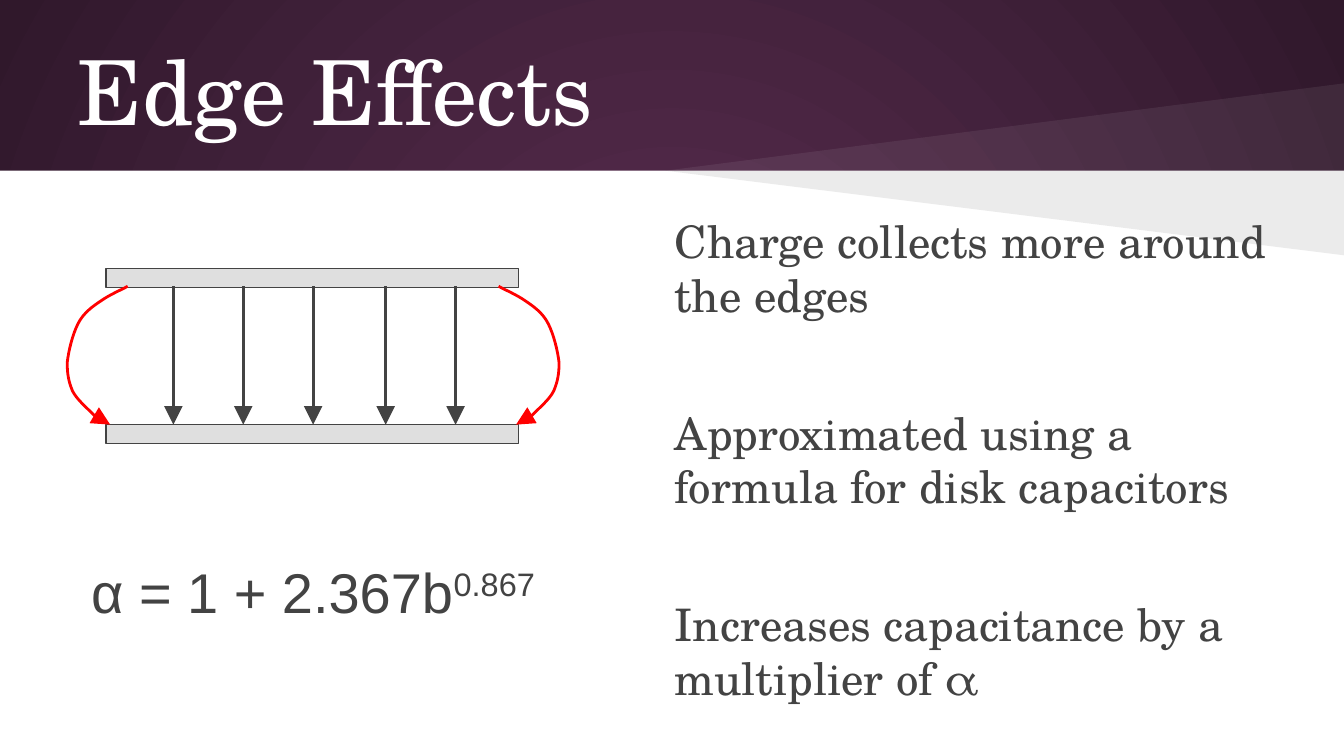
from dataclasses import dataclass

from lxml import etree
from pptx import Presentation
from pptx import util as u
from pptx.dml.color import RGBColor
from pptx.enum import shapes, text
from pptx.oxml.ns import qn

DARK, WHITE, RED = "434343", "FFFFFF", "FF0000"
SERIF = "TeX Gyre Schola"
PAGE_WIDTH = 10
PAGE_HEIGHT = PAGE_WIDTH * 9 / 16
BAND_HEIGHT = 1.27
PLATE_TOPS = (2.0, 3.16)
FIELD_TOP, FIELD_BOTTOM = 2.13, 3.16
DIAGRAM_CENTER = 2.33

Point = tuple[float, float]


@dataclass(frozen=True)
class Area:
    left: float
    top: float
    width: float
    height: float

    def lengths(self) -> list[u.Length]:
        return [u.Inches(v) for v in (self.left, self.top, self.width, self.height)]


@dataclass(frozen=True)
class Wedge:
    points: tuple[Point, ...]
    color: str
    opacity: int


def rgb(value: str) -> RGBColor:
    return RGBColor.from_string(value)


def add_bar(page, area: Area, fill: str, line: str | None = None) -> None:
    bar = page.shapes.add_shape(shapes.MSO_SHAPE.RECTANGLE, *area.lengths())
    bar.shadow.inherit = False
    bar.fill.solid()
    bar.fill.fore_color.rgb = rgb(fill)
    if line:
        bar.line.color.rgb = rgb(line)
        bar.line.width = u.Pt(0.75)
    else:
        bar.line.fill.background()


def add_outline(page, points: tuple[Point, ...], close: bool):
    builder = page.shapes.build_freeform(*(u.Inches(v) for v in points[0]))
    builder.add_line_segments(
        [(u.Inches(x), u.Inches(y)) for x, y in points[1:]], close=close
    )
    outline = builder.convert_to_shape()
    outline.shadow.inherit = False
    return outline


def add_wedge(page, wedge: Wedge) -> None:
    shape = add_outline(page, wedge.points, close=True)
    shape.fill.solid()
    shape.fill.fore_color.rgb = rgb(wedge.color)
    shape.line.fill.background()
    color = shape.element.spPr.find(f"{qn('a:solidFill')}/{qn('a:srgbClr')}")
    etree.SubElement(color, qn("a:alpha"), val=str(wedge.opacity * 1000))


def style_arrow(shape, color: str) -> None:
    shape.line.color.rgb = rgb(color)
    shape.line.width = u.Pt(1.5)
    line = shape.element.spPr.find(qn("a:ln"))
    etree.SubElement(line, qn("a:tailEnd"), type="triangle", w="lg", len="lg")


def add_field_line(page, x: float) -> None:
    arrow = page.shapes.add_connector(
        shapes.MSO_CONNECTOR.STRAIGHT,
        u.Inches(x), u.Inches(FIELD_TOP), u.Inches(x), u.Inches(FIELD_BOTTOM),
    )
    style_arrow(arrow, DARK)
    etree.SubElement(arrow.element.spPr, qn("a:effectLst"))


def add_fringe_line(page, points: tuple[Point, ...]) -> None:
    curve = add_outline(page, points, close=False)
    curve.fill.background()
    style_arrow(curve, RED)
    # Every three points become the controls and end of one Bezier curve
    outline = next(curve.element.iter(qn("a:path")))
    segments = outline.findall(qn("a:lnTo"))
    for start in range(0, len(segments), 3):
        bezier = etree.SubElement(outline, qn("a:cubicBezTo"))
        for segment in segments[start:start + 3]:
            bezier.append(segment[0])
            outline.remove(segment)


def add_text(page, area: Area, paragraphs: list[str], *, font: str, size: float,
             color: str, inset: Point = (0.08, 0.04), gap: float = 0,
             align=text.PP_ALIGN.LEFT, superscript: str = "") -> None:
    box = page.shapes.add_textbox(*area.lengths())
    frame = box.text_frame
    frame.word_wrap = True
    frame.vertical_anchor = text.MSO_ANCHOR.TOP
    frame.margin_left = frame.margin_right = u.Inches(inset[0])
    frame.margin_top = frame.margin_bottom = u.Inches(inset[1])
    for index, words in enumerate(paragraphs):
        para = frame.add_paragraph() if index else frame.paragraphs[0]
        para.alignment = align
        para.space_before = u.Pt(gap if index else 0)
        spans = [para.add_run()]
        spans[0].text = words
        if superscript:
            spans.append(para.add_run())
            spans[1].text = superscript
            spans[1].font._element.set("baseline", "30000")
        for span in spans:
            span.font.name = font
            span.font.size = u.Pt(size)
            span.font.color.rgb = rgb(color)


def set_background(page) -> None:
    fill = page.background.fill
    fill.gradient()
    stops = zip(fill.gradient_stops, ("592D50", "30182B"), (0, 1))
    for stop, color, position in stops:
        stop.color.rgb = rgb(color)
        stop.position = position
    gradient = next(page.element.iter(qn("a:gradFill")))
    gradient.remove(gradient.find(qn("a:lin")))
    radial = etree.SubElement(gradient, qn("a:path"), path="circle")
    etree.SubElement(radial, qn("a:fillToRect"),
                     {side: "50000" for side in "ltrb"})


def main() -> None:
    deck = Presentation()
    deck.slide_width = u.Inches(PAGE_WIDTH)
    deck.slide_height = u.Inches(PAGE_HEIGHT)
    page = deck.slides.add_slide(deck.slide_layouts[6])

    # Backdrop
    set_background(page)
    add_bar(page, Area(0, BAND_HEIGHT, PAGE_WIDTH, PAGE_HEIGHT - BAND_HEIGHT), WHITE)
    for tip, color, opacity in ((0.62, WHITE, 7), (1.9, "000000", 8)):
        corners = ((10, BAND_HEIGHT), (4.95, BAND_HEIGHT), (10, tip))
        add_wedge(page, Wedge(corners, color, opacity))

    # Title and key points
    add_text(page, Area(0.5, 0.23, 9, 0.94), ["Edge Effects"],
             font=SERIF, size=48, color=WHITE)
    add_text(page, Area(4.94, 1.55, 4.56, 3.71), [
        "Charge collects more around the edges",
        "Approximated using a formula for disk capacitors",
        "Increases capacitance by a multiplier of α",
    ], font=SERIF, size=24, color=DARK, gap=45)

    # Capacitor plates and the field between them
    for top in PLATE_TOPS:
        add_bar(page, Area(0.79, top, 3.07, 0.14), "DFDFDF", DARK)
    for x in (1.29, 1.81, 2.33, 2.87, 3.39):
        add_field_line(page, x)

    # Fringe field, mirrored about the centre of the plates
    right_fringe = (
        (3.71, 2.13), (3.74, 2.15), (3.84, 2.19), (3.91, 2.24),
        (3.97, 2.28), (4.04, 2.33), (4.08, 2.41),
        (4.12, 2.49), (4.15, 2.61), (4.16, 2.7),
        (4.16, 2.78), (4.15, 2.84), (4.12, 2.91),
        (4.09, 2.97), (4.02, 3.03), (3.97, 3.08),
        (3.93, 3.12), (3.86, 3.15), (3.84, 3.16),
    )
    left_fringe = tuple((2 * DIAGRAM_CENTER - x, y) for x, y in right_fringe)
    for points in (right_fringe, left_fringe):
        add_fringe_line(page, points)

    # Formula
    add_text(page, Area(0.5, 4.05, 3.66, 0.86), ["α = 1 + 2.367b"],
             font="Arial", size=30, color=DARK, inset=(0.1, 0.1),
             align=text.PP_ALIGN.CENTER, superscript="0.867")

    deck.save("out.pptx")


if __name__ == "__main__":
    main()
